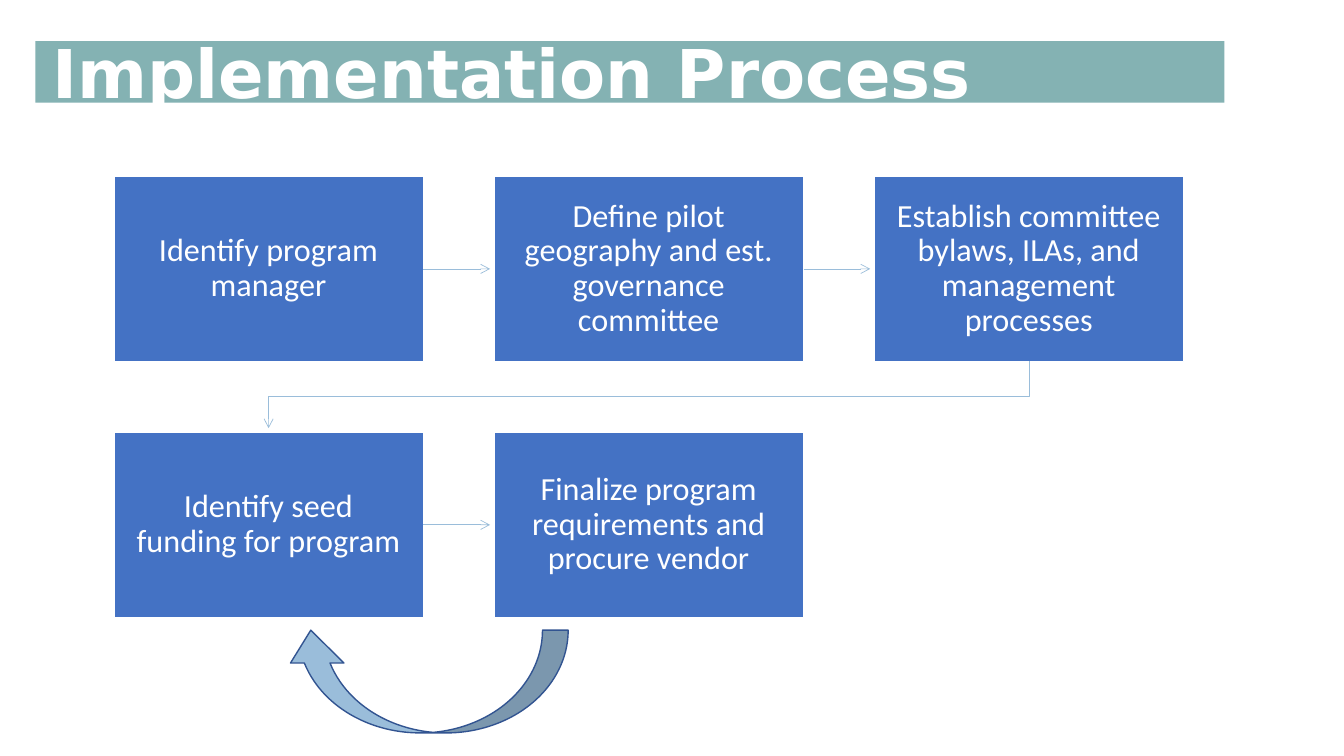
from dataclasses import dataclass
from itertools import pairwise

from lxml.etree import SubElement
from pptx import Presentation
from pptx.dml.color import RGBColor
from pptx.enum.shapes import MSO_CONNECTOR, MSO_SHAPE
from pptx.enum.text import MSO_ANCHOR, MSO_AUTO_SIZE, PP_ALIGN
from pptx.oxml.ns import qn
from pptx.util import Cm, Pt

TITLE = "Implementation Process"
STEPS = [
    ["Identify program manager",
     "Define pilot geography and est. governance committee",
     "Establish committee bylaws, ILAs, and management processes"],
    ["Identify seed funding for program",
     "Finalize program requirements and procure vendor"],
]


@dataclass(frozen=True)
class Theme:
    band: str = "84B2B3"
    box: str = "4472C4"
    flow: str = "9ABDDA"
    edge: str = "325491"
    white: str = "FFFFFF"
    head: str = "DejaVu Sans"
    body: str = "Calibri"
    big: int = 48
    size: int = 23


THEME = Theme()

# Lengths in centimetres
LEFT, TOP = 2.87, 4.44
WIDE, HIGH = 7.8, 4.67
COL, ROW = 9.67 - 0.09, 6.45
NEAR = 0.1  # gap between an arrow tip and its box


def write(shape, text, font=THEME.body, size=THEME.size, bold=False,
          align=PP_ALIGN.CENTER, inset=(0.46, 0.46), spacing=0.9):
    """Fill a shape with text; inset is (sides, top and bottom) in cm."""
    frame = shape.text_frame
    frame.word_wrap = True
    frame.auto_size = MSO_AUTO_SIZE.NONE
    frame.vertical_anchor = MSO_ANCHOR.MIDDLE
    frame.margin_left = frame.margin_right = Cm(inset[0])
    frame.margin_top = frame.margin_bottom = Cm(inset[1])
    para = frame.paragraphs[0]
    para.alignment = align
    para.line_spacing = spacing
    run = para.add_run()
    run.text = text
    run.font.name = font
    run.font.size = Pt(size)
    run.font.bold = bold
    run.font.color.rgb = RGBColor.from_string(THEME.white)


def block(slide, kind, x, y, w, h, fill, line=None):
    shape = slide.shapes.add_shape(kind, Cm(x), Cm(y), Cm(w), Cm(h))
    shape.shadow.inherit = False
    shape.fill.solid()
    shape.fill.fore_color.rgb = RGBColor.from_string(fill)
    if line:
        shape.line.color.rgb = RGBColor.from_string(line)
        shape.line.width = Pt(1)
    else:
        shape.line.fill.background()
    return shape


def point(shape):
    """Give a line the flow colour and an open arrowhead at its end."""
    shape.line.color.rgb = RGBColor.from_string(THEME.flow)
    shape.line.width = Pt(0.5)
    props = shape._element.spPr
    SubElement(props.find(qn("a:ln")), qn("a:tailEnd"), type="arrow")
    if props.find(qn("a:effectLst")) is None:
        SubElement(props, qn("a:effectLst"))


def link(slide, start, end):
    """Draw an arrow between two boxes in the same row."""
    y = start.top + start.height // 2
    point(slide.shapes.add_connector(
        MSO_CONNECTOR.STRAIGHT, start.left + start.width, y,
        end.left - Cm(NEAR), y))


def bend(slide, start, end):
    """Draw an elbow arrow from one row down to the next."""
    x1, x2 = (box.left + box.width // 2 for box in (start, end))
    y1 = start.top + start.height
    mid = (y1 + end.top) // 2
    form = slide.shapes.build_freeform(x1, y1)
    form.add_line_segments(
        [(x1, mid), (x2, mid), (x2, end.top - Cm(NEAR))], close=False)
    shape = form.convert_to_shape()
    shape.shadow.inherit = False
    shape.fill.background()
    point(shape)


def head(slide):
    band = block(slide, MSO_SHAPE.RECTANGLE, 0.89, 1.04, 29.97, 1.55,
                 THEME.band)
    title = slide.shapes.title
    title._element.addprevious(band._element)
    title.left, title.top = Cm(1.07), Cm(0.66)
    title.width, title.height = Cm(29.21), Cm(2.31)
    write(title, TITLE, font=THEME.head, size=THEME.big, bold=True,
          align=PP_ALIGN.LEFT, inset=(0.25, 0.13), spacing=1.0)


def flow(slide):
    grid = []
    for r, row in enumerate(STEPS):
        grid.append([])
        for c, text in enumerate(row):
            box = block(slide, MSO_SHAPE.RECTANGLE, LEFT + c * COL,
                        TOP + r * ROW, WIDE, HIGH, THEME.box, THEME.white)
            write(box, text)
            grid[r].append(box)
    for row in grid:
        for start, end in pairwise(row):
            link(slide, start, end)
    for upper, lower in pairwise(grid):
        bend(slide, upper[-1], lower[0])


def loop(slide):
    arrow = block(slide, MSO_SHAPE.CURVED_UP_ARROW, 7.16, 15.88, 7.16, 2.59,
                  THEME.flow, THEME.edge)
    arrow._element.spPr.xfrm.set("flipH", "1")
    for i, value in enumerate((0.25, 0.52, 0.32)):
        arrow.adjustments[i] = value


def main():
    deck = Presentation()
    deck.slide_width, deck.slide_height = Cm(33.87), Cm(19.05)
    slide = deck.slides.add_slide(deck.slide_layouts[5])
    head(slide)
    flow(slide)
    loop(slide)
    deck.save("out.pptx")


if __name__ == "__main__":
    main()
